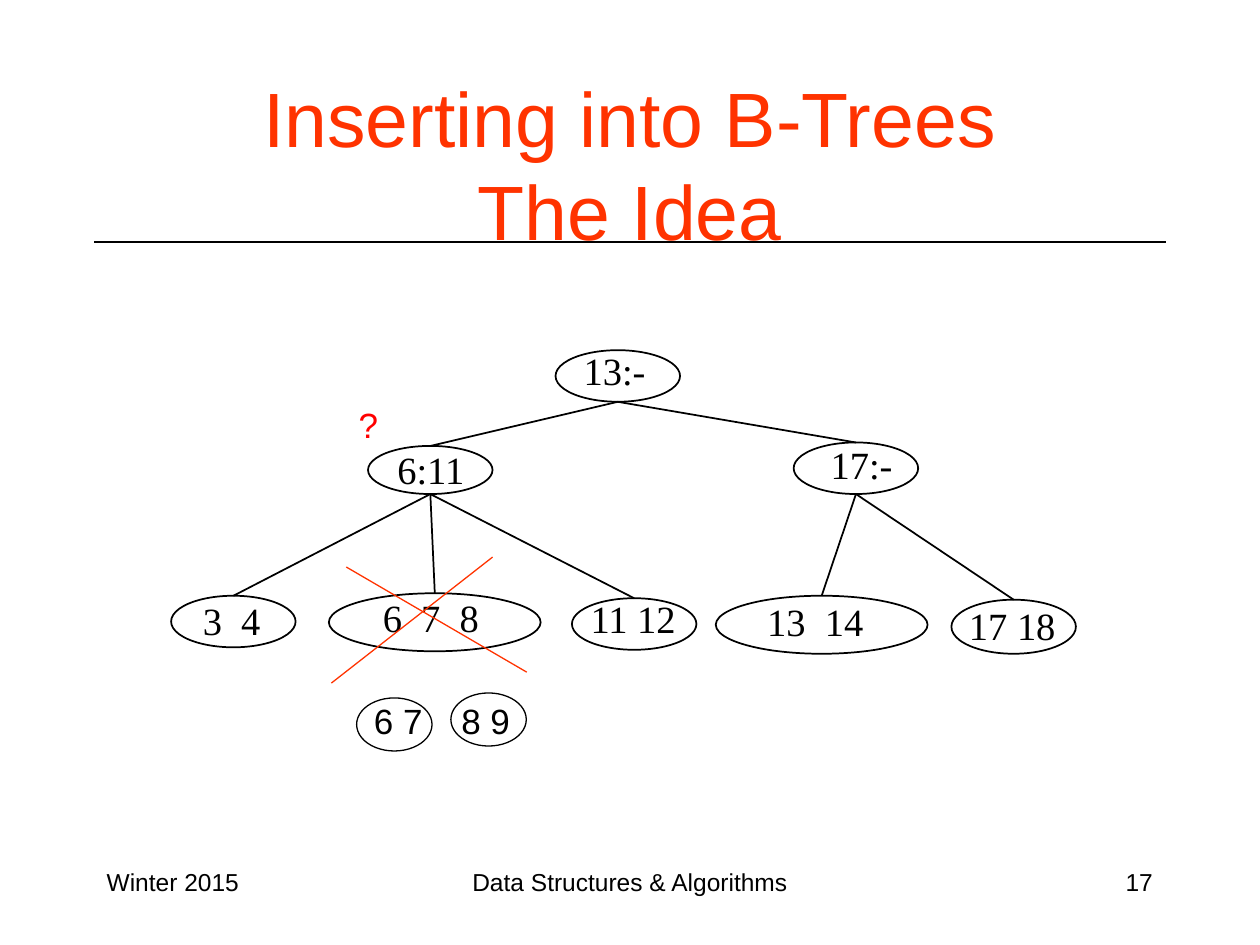
"""Build a slide on inserting a key into a B-tree."""
from dataclasses import dataclass

from lxml import etree
from pptx import Presentation
from pptx.dml.color import RGBColor
from pptx.enum.shapes import MSO_CONNECTOR, MSO_SHAPE
from pptx.enum.text import MSO_ANCHOR, PP_ALIGN
from pptx.oxml.ns import qn
from pptx.util import Cm, Pt

BLACK = RGBColor(0x00, 0x00, 0x00)
ORANGE = RGBColor(0xFF, 0x33, 0x00)
RED = RGBColor(0xFF, 0x00, 0x00)
LEFT, CENTER, RIGHT = PP_ALIGN.LEFT, PP_ALIGN.CENTER, PP_ALIGN.RIGHT
TOP, MIDDLE = MSO_ANCHOR.TOP, MSO_ANCHOR.MIDDLE
OVAL, STRAIGHT = MSO_SHAPE.OVAL, MSO_CONNECTOR.STRAIGHT


@dataclass
class Box:
    x: float
    y: float
    w: float
    h: float

    def lengths(self) -> list:
        return [Cm(v) for v in (self.x, self.y, self.w, self.h)]

    def top(self) -> tuple:
        return self.x + self.w / 2, self.y

    def bottom(self) -> tuple:
        return self.x + self.w / 2, self.y + self.h


@dataclass
class Label:
    text: str
    box: Box
    size: int
    color: RGBColor = BLACK
    font: str = "Arial"
    align: PP_ALIGN = LEFT
    anchor: MSO_ANCHOR = TOP
    wrap: bool = True


@dataclass
class Node:
    text: str
    oval: Box
    text_x: float
    text_y: float
    text_w: float
    parent: int | None = None


LABELS = [
    Label("Winter 2015", Box(1.9, 17.35, 5.28, 1.27), 14),
    Label("Data Structures & Algorithms", Box(8.68, 17.35, 8.04, 1.27), 14, align=CENTER),
    Label("17", Box(18.21, 17.35, 5.28, 1.27), 14, align=RIGHT),
    Label("Inserting into B-Trees\vThe Idea", Box(1.9, 1.7, 21.6, 3.18), 44,
          ORANGE, align=CENTER, anchor=MIDDLE),
    Label("6 7", Box(7.29, 13.97, 1.5, 1.11), 20, wrap=False),
    Label("8 9", Box(9.05, 13.97, 1.5, 1.11), 20, wrap=False),
    Label("?", Box(6.98, 8, 0.91, 1.11), 20, RED, wrap=False),
]
NODES = [
    Node("13:-", Box(11.2, 7.06, 2.51, 1.04), 11.68, 7.14, 1.42),
    Node("6:11", Box(7.42, 8.99, 2.51, 0.97), 7.77, 9.14, 1.83, 0),
    Node("17:-", Box(16, 8.92, 2.51, 1.04), 16.61, 9.04, 1.52, 0),
    Node("3  4", Box(3.45, 12.01, 2.51, 1.04), 4.06, 12.17, 1.22, 1),
    Node("6  7  8", Box(6.63, 11.96, 4.27, 1.17), 7.67, 12.12, 2.03, 1),
    Node("11 12", Box(11.53, 12.06, 2.51, 1.04), 11.61, 12.14, 2.31, 1),
    Node("13  14", Box(14.43, 12.01, 4.27, 1.17), 15.42, 12.19, 2.03, 2),
    Node("17 18", Box(19.18, 12.09, 2.51, 1.09), 19.48, 12.27, 1.85, 2),
]
SPLIT_OVALS = [Box(7.19, 14.07, 1.52, 1.07), Box(9.09, 13.97, 1.52, 1.07)]
CROSS = [((6.98, 11.43), (10.62, 13.55)), ((9.93, 11.23), (6.68, 13.77))]


def add_label(s, label: Label):
    tf = s.shapes.add_textbox(*label.box.lengths()).text_frame
    tf.word_wrap = label.wrap
    tf.vertical_anchor = label.anchor
    tf.text = label.text
    p = tf.paragraphs[0]
    p.alignment = label.align
    for r in p.runs:
        r.font.name = label.font
        r.font.size = Pt(label.size)
        r.font.color.rgb = label.color
    return tf


def add_oval(s, box: Box, width: float) -> None:
    sp = s.shapes.add_shape(OVAL, *box.lengths())
    sp.shadow.inherit = False
    sp.fill.background()
    sp.line.color.rgb = BLACK
    sp.line.width = Pt(width)


def add_line(s, start: tuple, end: tuple, color: RGBColor, width: float) -> None:
    line = s.shapes.add_connector(STRAIGHT, *(Cm(v) for v in start + end))
    line.line.color.rgb = color
    line.line.width = Pt(width)
    etree.SubElement(line._element.spPr, qn("a:effectLst"))


def add_node_text(s, node: Node) -> None:
    box = Box(node.text_x, node.text_y, node.text_w, 0.79)
    tf = add_label(s, Label(node.text, box, 22, font="Times New Roman",
                            align=CENTER, wrap=False))
    tf.margin_left = tf.margin_right = tf.margin_top = tf.margin_bottom = 0
    tf.paragraphs[0].line_spacing = 0.85


def main() -> None:
    prs = Presentation()
    prs.slide_width, prs.slide_height = Cm(25.4), Cm(19.05)
    s = prs.slides.add_slide(prs.slide_layouts[6])
    add_line(s, (1.9, 4.88), (23.5, 4.88), BLACK, 0.75)
    for label in LABELS:
        add_label(s, label)
    for node in NODES:
        add_oval(s, node.oval, 1)
        if node.parent is not None:
            add_line(s, NODES[node.parent].oval.bottom(), node.oval.top(), BLACK, 1)
        add_node_text(s, node)
    for box in SPLIT_OVALS:
        add_oval(s, box, 0.75)
    for start, end in CROSS:
        add_line(s, start, end, ORANGE, 0.75)
    prs.save("out.pptx")


if __name__ == "__main__":
    main()
